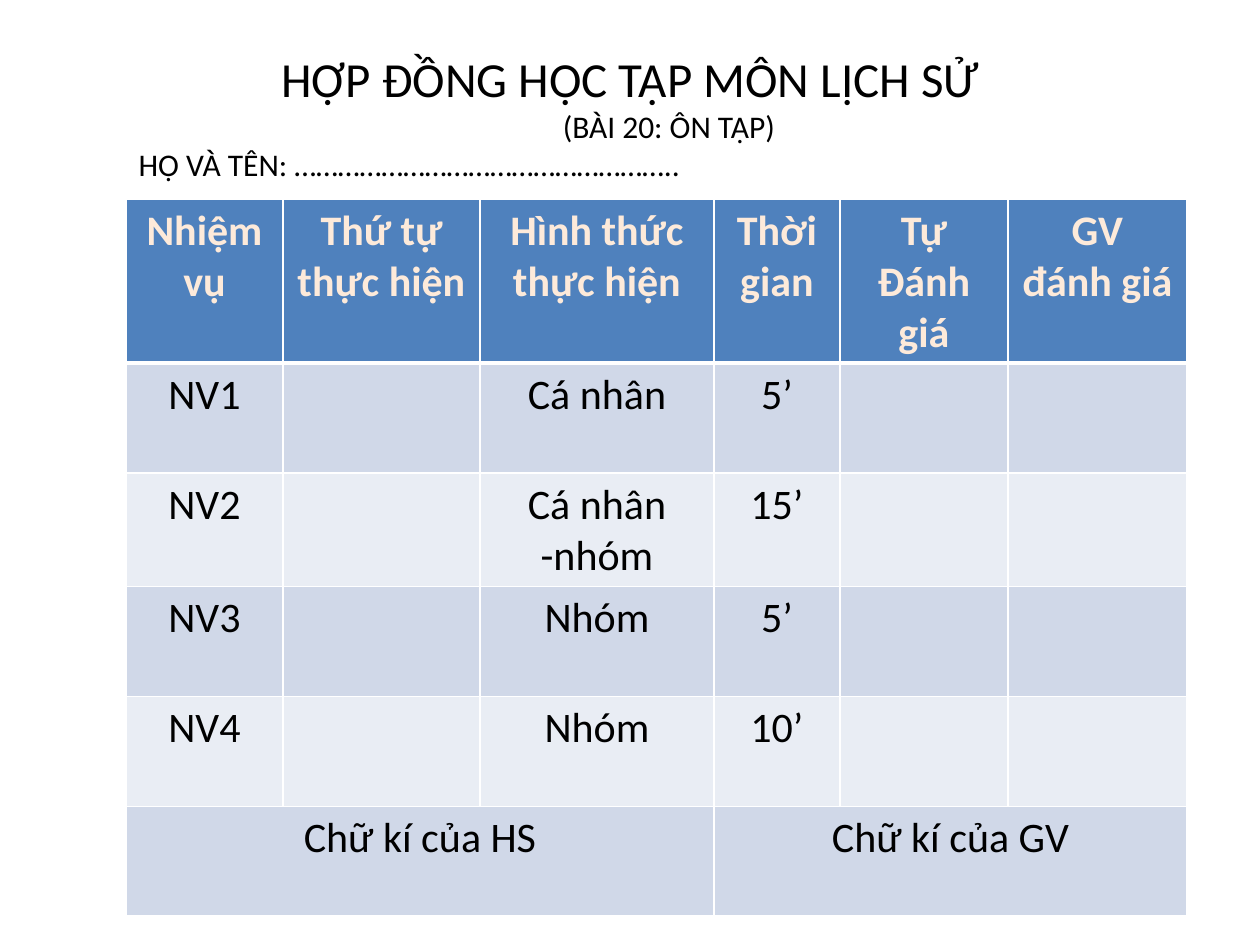
from lxml.etree import SubElement
from pptx import Presentation
from pptx.dml.color import RGBColor
from pptx.enum.text import MSO_ANCHOR as Anchor, MSO_AUTO_SIZE as Auto, PP_ALIGN as Align
from pptx.oxml.ns import qn
from pptx.util import Emu, Pt

BLACK = RGBColor(0x00, 0x00, 0x00)
WHITE = RGBColor(0xFF, 0xFF, 0xFF)
CREAM = RGBColor(0xFD, 0xEA, 0xDA)
BLUE = RGBColor(0x4F, 0x81, 0xBD)
MIST = RGBColor(0xD0, 0xD8, 0xE8)
PALE = RGBColor(0xE9, 0xED, 0xF4)

HEAD_FONT = {"name": "Calibri", "size": Pt(24), "bold": True}
BODY_FONT = {"name": "Calibri", "size": Pt(24), "bold": False}

TITLE = [
    ("HỢP ĐỒNG HỌC TẬP MÔN LỊCH SỬ", 28, Align.CENTER, 0),
    ("(BÀI 20: ÔN TẬP)", 18, Align.CENTER, 78),
    ("HỌ VÀ TÊN: ……………………………………………..", 18, Align.LEFT, 0),
]
COLS = [157, 197, 234, 126, 168, 179]
ROWS = [116] + [110] * 5
CELLS = [
    ["Nhiệm vụ", "Thứ tự thực hiện", "Hình thức thực hiện",
     "Thời gian", "Tự\nĐánh giá", "GV\nđánh giá"],
    ["NV1", "", "Cá nhân", "5’", "", ""],
    ["NV2", "", "Cá nhân -nhóm", "15’", "", ""],
    ["NV3", "", "Nhóm", "5’", "", ""],
    ["NV4", "", "Nhóm", "10’", "", ""],
    ["Chữ kí của HS", "", "", "Chữ kí của GV", "", ""],
]


def px(n):
    return Emu(round(n * 914400 / 126))


def style(item, form):
    for key, value in form.items():
        setattr(item, key, value)


def paint(font, form, color):
    style(font, form)
    font.color.rgb = color


def add_title(slide):
    box = slide.shapes.title
    style(box, {"left": px(126), "top": px(42), "width": px(1008), "height": px(149)})
    frame = box.text_frame
    frame.text = "\n".join(line[0] for line in TITLE)
    style(frame, {"word_wrap": True, "auto_size": Auto.SHAPE_TO_FIT_TEXT,
                  "vertical_anchor": Anchor.TOP})
    for para, (_, size, align, shift) in zip(frame.paragraphs, TITLE):
        para.alignment = align
        para._p.get_or_add_pPr().set("marL", str(px(shift)))
        paint(para.runs[0].font, {"name": "Calibri", "size": Pt(size)}, BLACK)


def edge(cell, widths):
    props = cell._tc.get_or_add_tcPr()
    for spot, (side, width) in enumerate(widths.items()):
        line = SubElement(props, qn("a:ln" + side), w=str(Pt(width)))
        fill = SubElement(line, qn("a:solidFill"))
        SubElement(fill, qn("a:srgbClr"), val=str(WHITE))
        props.insert(spot, line)


def fill_cell(cell, text, row):
    head = row == 0
    cell.fill.solid()
    cell.fill.fore_color.rgb = BLUE if head else MIST if row % 2 else PALE
    edge(cell, {"L": 1, "R": 1, "T": 3 if row == 1 else 1, "B": 3 if head else 1})
    cell.text = text
    for para in cell.text_frame.paragraphs:
        para.alignment = Align.CENTER
        for run in para.runs:
            paint(run.font, HEAD_FONT if head else BODY_FONT, CREAM if head else BLACK)


def add_grid(slide):
    grid = slide.shapes.add_table(len(ROWS), len(COLS), px(126), px(199),
                                  px(sum(COLS)), px(sum(ROWS))).table
    for col, width in zip(grid.columns, COLS):
        col.width = px(width)
    for row, height in zip(grid.rows, ROWS):
        row.height = px(height)
    for r, texts in enumerate(CELLS):
        for c, text in enumerate(texts):
            fill_cell(grid.cell(r, c), text, r)
    last = len(ROWS) - 1
    for c in (0, 3):
        grid.cell(last, c).merge(grid.cell(last, c + 2))


def main():
    deck = Presentation()
    style(deck, {"slide_width": px(1260), "slide_height": px(945)})
    slide = deck.slides.add_slide(deck.slide_layouts[5])
    add_grid(slide)
    add_title(slide)
    deck.save("out.pptx")


if __name__ == "__main__":
    main()
